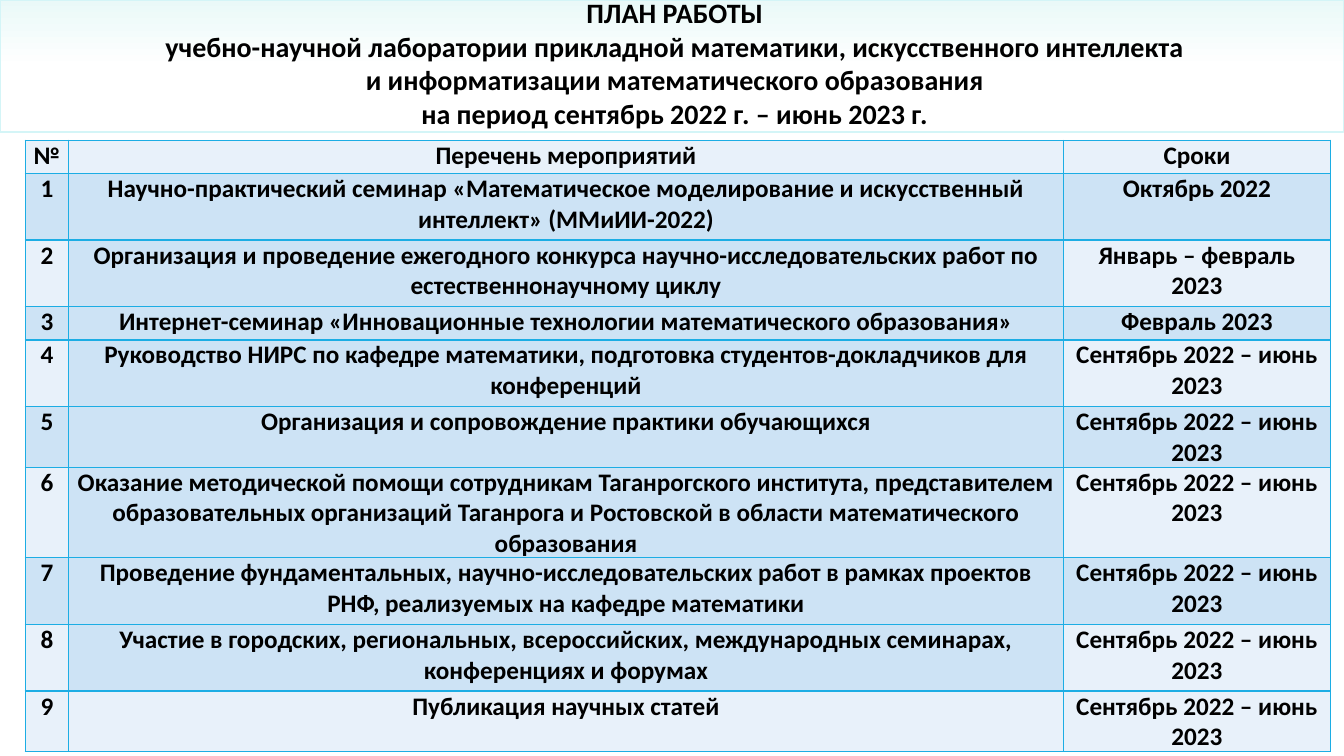
from dataclasses import dataclass
from typing import Any

from lxml import etree
from pptx import Presentation
from pptx.dml.color import RGBColor
from pptx.enum import shapes, text
from pptx.oxml import ns
from pptx.util import Pt


@dataclass(frozen=True)
class Theme:
    font: str = "Calibri"
    title_size: float = 20
    cell_size: float = 18
    ink: str = "000000"
    band_top: str = "EAF9F8"
    band_bottom: str = "FFFFFF"
    band_line: str = "D4F5F7"
    border: str = "1CADE4"
    light: str = "E8F1FA"
    shade: str = "CDE3F5"


@dataclass(frozen=True)
class Box:
    left: float
    top: float
    width: float
    height: float

    def emu(self) -> tuple[int, ...]:
        return tuple(Pt(v) for v in (self.left, self.top, self.width, self.height))


@dataclass(frozen=True)
class Event:
    name: str
    dates: str
    units: int = 2


THEME = Theme()
SLIDE = Box(0, 0, 960, 540)
BAND = Box(0, 0, 960, 94.3)
TITLE = Box(105.1, 25.9, 753.8, 38.2)
COLUMNS = (31, 710.6, 190.8)
ROW_UNIT = 23.8
TABLE_LEFT, TABLE_TOP = 18, 100.1
YEAR = "Сентябрь 2022 – июнь 2023"

TITLE_LINES = (
    "ПЛАН РАБОТЫ",
    "учебно-научной лаборатории прикладной математики, искусственного интеллекта "
    "и информатизации математического образования",
    "на период сентябрь 2022 г. – июнь 2023 г.",
)
EVENTS = (
    Event("Научно-практический семинар «Математическое моделирование и "
          "искусственный интеллект» (ММиИИ-2022)", "Октябрь 2022"),
    Event("Организация и проведение ежегодного конкурса научно-исследовательских "
          "работ по естественнонаучному циклу", "Январь – февраль 2023"),
    Event("Интернет-семинар «Инновационные технологии математического "
          "образования»", "Февраль 2023", 1),
    Event("Руководство НИРС по кафедре математики, подготовка "
          "студентов-докладчиков для конференций", YEAR),
    Event("Организация и сопровождение практики обучающихся", YEAR, 1),
    Event("Оказание методической помощи сотрудникам Таганрогского института, "
          "представителем образовательных организаций Таганрога и Ростовской "
          "в области математического образования", YEAR),
    Event("Проведение фундаментальных, научно-исследовательских работ в рамках "
          "проектов РНФ, реализуемых на кафедре математики", YEAR),
    Event("Участие в городских, региональных, всероссийских, международных "
          "семинарах, конференциях и форумах", YEAR),
    Event("Публикация научных статей", YEAR, 1),
)


def rgb(value: str) -> RGBColor:
    return RGBColor.from_string(value)


def apply(target: Any, formats: dict[str, Any]) -> None:
    for name, value in formats.items():
        setattr(target, name, value)


def write(tf: Any, lines: tuple[str, ...], size: float) -> None:
    p = tf.paragraphs[0]
    p.alignment = text.PP_ALIGN.CENTER
    for i, line in enumerate(lines):
        if i:
            p.add_line_break()
        r = p.add_run()
        r.text = line
        apply(r.font, {"name": THEME.font, "size": Pt(size), "bold": True})
        r.font.color.rgb = rgb(THEME.ink)


def draw_band(s: Any) -> None:
    sp = s.shapes.add_shape(shapes.MSO_SHAPE.RECTANGLE, *BAND.emu())
    sp.shadow.inherit = False
    sp.fill.gradient()
    sp.fill.gradient_angle = 270
    stops = ((THEME.band_top, 0), (THEME.band_bottom, 0.51))
    for stop, (color, position) in zip(sp.fill.gradient_stops, stops):
        stop.color.rgb = rgb(color)
        stop.position = position
    sp.line.color.rgb = rgb(THEME.band_line)
    sp.line.width = Pt(0.75)


def draw_title(s: Any) -> None:
    tf = s.shapes.add_textbox(*TITLE.emu()).text_frame
    apply(tf, {"word_wrap": True, "vertical_anchor": text.MSO_ANCHOR.MIDDLE})
    write(tf, TITLE_LINES, THEME.title_size)


def set_borders(cell: Any, top_width: float) -> None:
    tc_pr = cell._tc.get_or_add_tcPr()
    for side, width in {"L": 1, "R": 1, "T": top_width, "B": 1}.items():
        ln = etree.SubElement(tc_pr, ns.qn(f"a:ln{side}"), w=str(Pt(width)))
        fill = etree.SubElement(ln, ns.qn("a:solidFill"))
        etree.SubElement(fill, ns.qn("a:srgbClr"), val=THEME.border)


def cell_fill(row: int, column: int) -> str:
    if row in (0, len(EVENTS)):
        return THEME.light
    return THEME.shade if row % 2 or column == 1 else THEME.light


def draw_plan(s: Any) -> None:
    rows = [("№", "Перечень мероприятий", "Сроки")]
    rows += [(str(i), e.name, e.dates) for i, e in enumerate(EVENTS, 1)]
    heights = [ROW_UNIT * n for n in (1, *(e.units for e in EVENTS))]
    frame = Box(TABLE_LEFT, TABLE_TOP, sum(COLUMNS), sum(heights))
    table = s.shapes.add_table(len(rows), len(COLUMNS), *frame.emu()).table
    for column, width in zip(table.columns, COLUMNS):
        column.width = Pt(width)
    for i, (values, height) in enumerate(zip(rows, heights)):
        table.rows[i].height = Pt(height)
        for j, value in enumerate(values):
            cell = table.cell(i, j)
            apply(cell, {"margin_left": Pt(5), "margin_right": Pt(5),
                         "margin_top": 0, "margin_bottom": 0})
            set_borders(cell, 2 if i == len(EVENTS) else 1)
            cell.fill.solid()
            cell.fill.fore_color.rgb = rgb(cell_fill(i, j))
            write(cell.text_frame, (value,), THEME.cell_size)


def main() -> None:
    """Build the laboratory work plan slide."""
    prs = Presentation()
    apply(prs, {"slide_width": Pt(SLIDE.width), "slide_height": Pt(SLIDE.height)})
    s = prs.slides.add_slide(prs.slide_layouts[6])
    draw_band(s)
    draw_title(s)
    draw_plan(s)
    prs.save("out.pptx")


if __name__ == "__main__":
    main()
